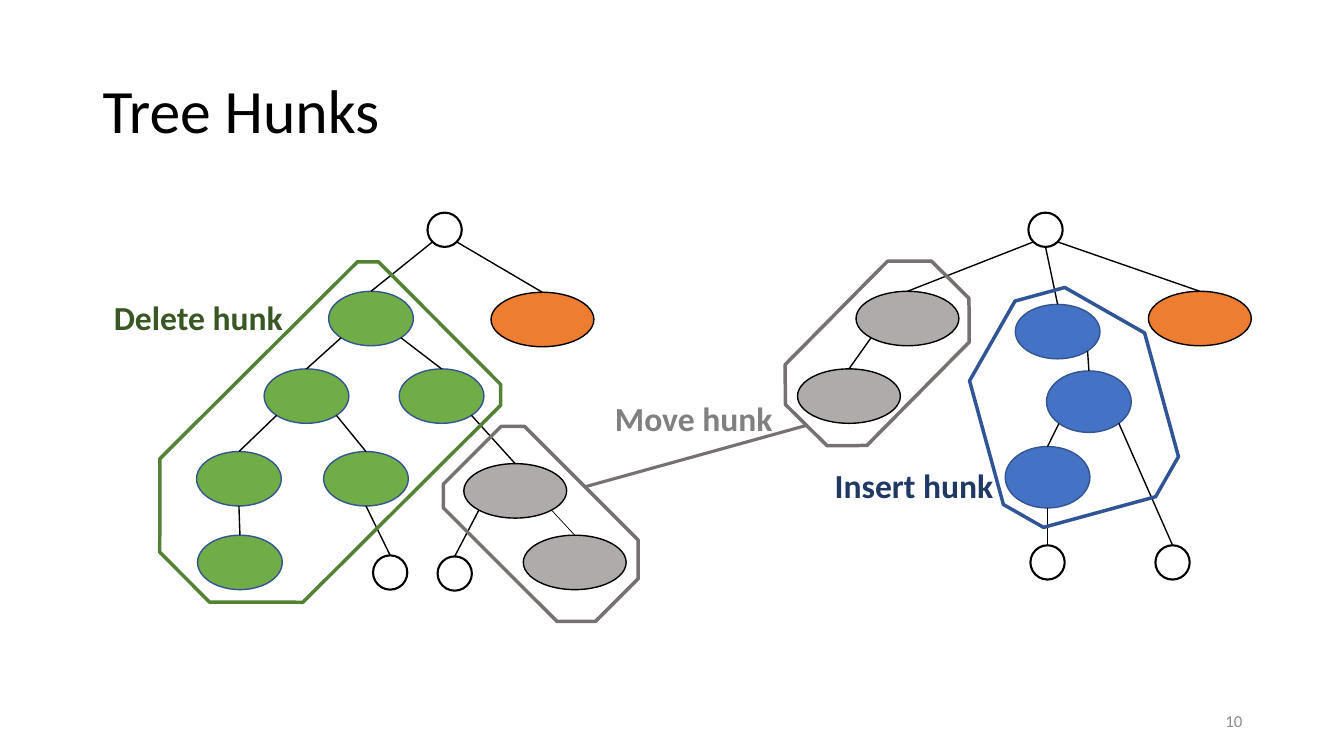
from math import sqrt

from lxml.etree import SubElement
from pptx import Presentation
from pptx.dml.color import RGBColor
from pptx.enum.shapes import MSO_CONNECTOR as Connector, MSO_SHAPE as Shape
from pptx.enum.text import MSO_ANCHOR as Anchor, MSO_AUTO_SIZE as AutoSize, PP_ALIGN as Align
from pptx.oxml.ns import qn
from pptx.util import Inches, Pt

BLACK = RGBColor(0x00, 0x00, 0x00)
GREEN = RGBColor(0x70, 0xAD, 0x47)
BLUE = RGBColor(0x44, 0x72, 0xC4)
GRAY = RGBColor(0xAF, 0xAB, 0xAB)
ORANGE = RGBColor(0xED, 0x7D, 0x31)
NODE_EDGE = RGBColor(0x32, 0x54, 0x91)
DELETE_OUTLINE = RGBColor(0x54, 0x82, 0x35)
MOVE_OUTLINE = RGBColor(0x76, 0x71, 0x71)
INSERT_OUTLINE = RGBColor(0x2F, 0x55, 0x97)
DELETE_TEXT = RGBColor(0x38, 0x57, 0x23)
MOVE_TEXT = RGBColor(0x80, 0x80, 0x80)
INSERT_TEXT = RGBColor(0x20, 0x38, 0x64)
NUMBER_TEXT = RGBColor(0x8C, 0x8C, 0x8C)

LEFT, MIDDLE, RIGHT = -1, 0, 1

NODE_KINDS = {
    "leaf": (0.34, 0.34, None, BLACK, 1.5),
    "delete": (0.84, 0.54, GREEN, NODE_EDGE, 1),
    "move": (1.02, 0.54, GRAY, BLACK, 1),
    "update": (1.02, 0.54, ORANGE, BLACK, 1),
    "insert": (0.84, 0.61, BLUE, NODE_EDGE, 1),
    "insert top": (0.84, 0.54, BLUE, NODE_EDGE, 1),
}

OLD_NODES = {
    "root": ("leaf", 4.24, 2.11),
    "top": ("delete", 3.26, 2.89),
    "update": ("update", 4.87, 2.9),
    "left": ("delete", 2.62, 3.66),
    "right": ("delete", 3.96, 3.66),
    "left left": ("delete", 1.95, 4.48),
    "left right": ("delete", 3.21, 4.48),
    "bottom": ("delete", 1.96, 5.31),
    "delete leaf": ("leaf", 3.7, 5.51),
    "moved": ("move", 4.6, 4.6),
    "moved child": ("move", 5.19, 5.31),
    "move leaf": ("leaf", 4.34, 5.52),
}
OLD_EDGES = [
    ("root", LEFT, "top"),
    ("root", RIGHT, "update"),
    ("top", LEFT, "left"),
    ("top", RIGHT, "right"),
    ("left", LEFT, "left left"),
    ("left", RIGHT, "left right"),
    ("left left", MIDDLE, "bottom"),
    ("left right", MIDDLE, "delete leaf"),
    ("right", RIGHT, "moved"),
    ("moved", LEFT, "move leaf"),
    ("moved", RIGHT, "moved child", 0.5),
]

NEW_NODES = {
    "root": ("leaf", 10.2, 2.11),
    "moved": ("move", 8.49, 2.89),
    "moved child": ("move", 7.91, 3.66),
    "update": ("update", 11.39, 2.89),
    "top": ("insert top", 10.07, 3.02),
    "middle": ("insert", 10.38, 3.68),
    "bottom": ("insert", 9.97, 4.43),
    "left leaf": ("leaf", 10.22, 5.41),
    "right leaf": ("leaf", 11.46, 5.41),
}
NEW_EDGES = [
    ("root", LEFT, "moved"),
    ("root", MIDDLE, "top"),
    ("root", RIGHT, "update"),
    ("moved", LEFT, "moved child"),
    ("top", RIGHT, "middle"),
    ("middle", LEFT, "bottom"),
    ("middle", RIGHT, "right leaf"),
    ("bottom", MIDDLE, "left leaf"),
]

HUNKS = [
    ((2.09, 2.68, 2.01, 3.57), 225.1, (0.326, 0.073), DELETE_OUTLINE),
    ((4.83, 4.22, 1.14, 2.03), 135, (0.238, 0.145), MOVE_OUTLINE),
    ((8.14, 2.48, 1.14, 2.03), 224.7, (0.245, 0.27), MOVE_OUTLINE),
    ((9.71, 2.88, 1.8, 2.24), 344.7, (0.358, 0.18), INSERT_OUTLINE),
]

LABELS = [
    ("Delete hunk", (1.03, 2.9, 2.05, 0.5), DELETE_TEXT),
    ("Move hunk", (6, 3.9, 1.88, 0.5), MOVE_TEXT),
    ("Insert hunk", (8.18, 4.56, 1.81, 0.5), INSERT_TEXT),
]


def write(frame, text, size, color, bold=False, align=Align.LEFT, spacing=1.0):
    para = frame.paragraphs[0]
    para.alignment = align
    para.line_spacing = spacing
    span = para.add_run()
    span.text = text
    span.font.name = "Calibri"
    span.font.size = Pt(size)
    span.font.bold = bold
    span.font.color.rgb = color


class TreeSlide:
    def __init__(self, page):
        self.page = page

    def text(self, text, place, anchor=Anchor.MIDDLE, grow=False, **style):
        box = self.page.shapes.add_textbox(*map(Inches, place))
        frame = box.text_frame
        frame.word_wrap = True
        frame.vertical_anchor = anchor
        frame.auto_size = AutoSize.SHAPE_TO_FIT_TEXT if grow else AutoSize.NONE
        write(frame, text, **style)

    def shape(self, kind, place, fill, color, weight):
        shape = self.page.shapes.add_shape(kind, *map(Inches, place))
        shape.shadow.inherit = False
        if fill is None:
            shape.fill.background()
        else:
            shape.fill.solid()
            shape.fill.fore_color.rgb = fill
        shape.line.color.rgb = color
        shape.line.width = Pt(weight)
        return shape

    def line(self, start, end, color=BLACK, weight=1):
        line = self.page.shapes.add_connector(Connector.STRAIGHT, *map(Inches, (*start, *end)))
        line.line.color.rgb = color
        line.line.width = Pt(weight)
        SubElement(line.element.spPr, qn("a:effectLst"))

    def hunk(self, place, rotation, snips, color):
        outline = self.shape(Shape.SNIP_2_SAME_RECTANGLE, place, None, color, 2.5)
        outline.rotation = rotation
        for index, snip in enumerate(snips):
            outline.adjustments[index] = snip

    def tree(self, nodes, edges):
        for kind, left, top in nodes.values():
            width, height, fill, color, weight = NODE_KINDS[kind]
            self.shape(Shape.OVAL, (left, top, width, height), fill, color, weight)
        for parent, side, child, *weight in edges:
            self.line(lower_site(nodes[parent], side), top_site(nodes[child]), BLACK, *weight)


def top_site(node):
    kind, left, top = node
    return left + NODE_KINDS[kind][0] / 2, top


def lower_site(node, side):
    kind, left, top = node
    width, height = NODE_KINDS[kind][:2]
    drop = 1 / sqrt(2) if side else 1
    return left + width / 2 * (1 + side / sqrt(2)), top + height / 2 * (1 + drop)


def main():
    deck = Presentation()
    deck.slide_width = Inches(13.33)
    deck.slide_height = Inches(7.5)
    slide = TreeSlide(deck.slides.add_slide(deck.slide_layouts[6]))

    slide.text("Tree Hunks", (0.92, 0.4, 11.5, 1.45), size=44, color=BLACK, spacing=0.9)
    slide.text("10", (9.42, 6.95, 3, 0.4), size=12, color=NUMBER_TEXT, align=Align.RIGHT)
    slide.tree(OLD_NODES, OLD_EDGES)
    slide.tree(NEW_NODES, NEW_EDGES)
    for hunk in HUNKS:
        slide.hunk(*hunk)
    for text, place, color in LABELS:
        slide.text(text, place, Anchor.TOP, grow=True, size=24, color=color, bold=True)
    slide.line((5.8, 4.83), (8, 4.22), MOVE_OUTLINE, 2.25)

    deck.save("out.pptx")


if __name__ == "__main__":
    main()
